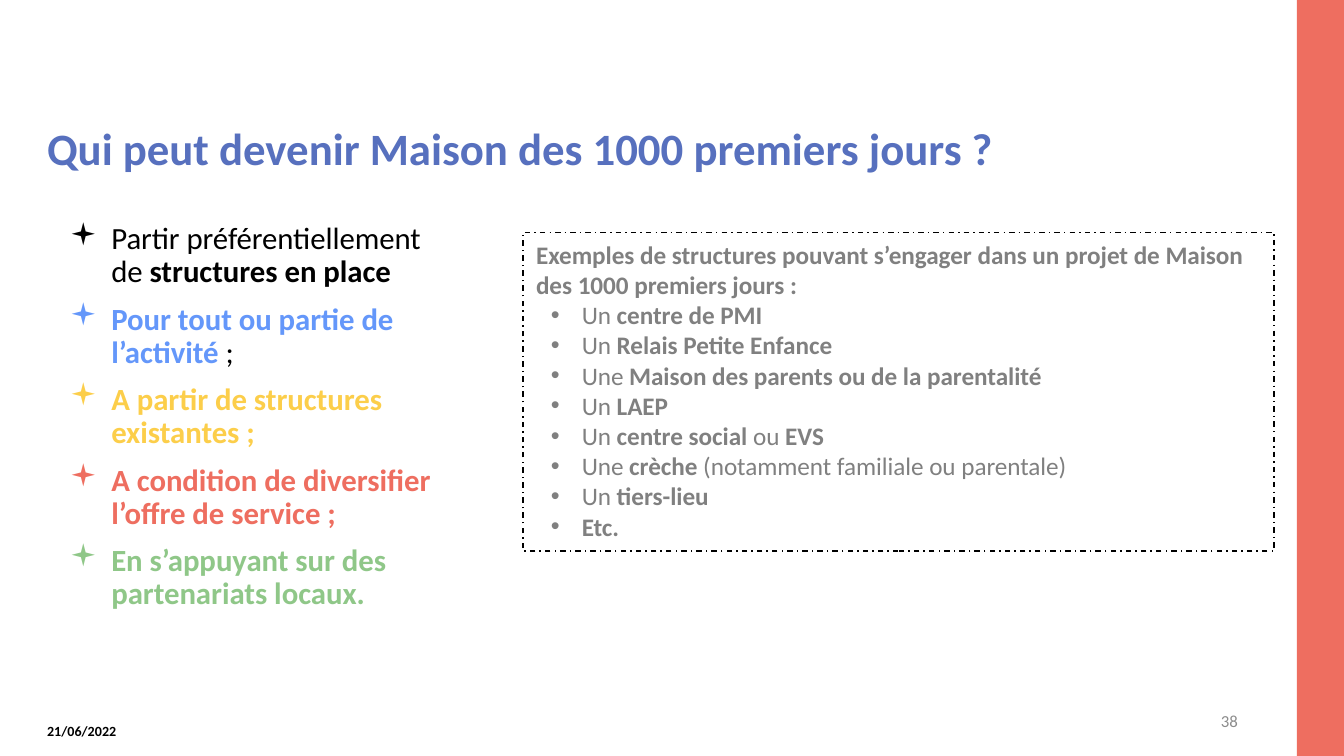
from pptx import Presentation
from pptx.dml.color import RGBColor
from pptx.enum.dml import MSO_LINE
from pptx.enum.shapes import MSO_SHAPE
from pptx.enum.text import MSO_ANCHOR, MSO_AUTO_SIZE, PP_ALIGN
from pptx.oxml.ns import qn
from pptx.util import Inches, Pt
from lxml.etree import SubElement

FONT = "Calibri"
BLACK, GREY, CORAL = "000000", "808080", "EE6E60"
WIDTH = 10
HEIGHT = WIDTH * 9 / 16
BAND_WIDTH = 0.35
TITLE = "Qui peut devenir Maison des 1000 premiers jours ?"

# Each paragraph is a list of runs: (text, bold, colour)
CONDITIONS = [
    [("Partir préférentiellement de ", False, BLACK), ("structures en place", True, BLACK)],
    [("Pour tout ou partie de l’activité ", True, "6497FA"), (";", False, BLACK)],
    [("A partir de structures existantes ;", True, "FCCE4A")],
    [("A condition de diversifier l’offre de service ;", True, CORAL)],
    [("En s’appuyant sur des partenariats locaux.", True, "8FC788")],
]
EXAMPLES_INTRO = ("Exemples de structures pouvant s’engager dans un projet "
                  "de Maison des 1000 premiers jours :")
# Runs: (text, bold)
EXAMPLES = [
    [("Un ", False), ("centre de PMI", True)],
    [("Un ", False), ("Relais Petite Enfance", True)],
    [("Une ", False), ("Maison des parents ou de la parentalité", True)],
    [("Un ", False), ("LAEP", True)],
    [("Un ", False), ("centre social", True), (" ou ", False), ("EVS", True)],
    [("Une ", False), ("crèche", True), (" (notamment familiale ou parentale)", False)],
    [("Un ", False), ("tiers-lieu", True)],
    [("Etc.", True)],
]


def rgb(value):
    return RGBColor.from_string(value)


def place(sp, left, top, width, height):
    sp.left, sp.top, sp.width, sp.height = map(Inches, (left, top, width, height))


def setup_frame(sp, anchor=MSO_ANCHOR.TOP, inset_x=0.1, inset_y=0.05):
    tf = sp.text_frame
    tf.word_wrap = True
    tf.auto_size = MSO_AUTO_SIZE.NONE
    tf.vertical_anchor = anchor
    tf.margin_left = tf.margin_right = Inches(inset_x)
    tf.margin_top = tf.margin_bottom = Inches(inset_y)
    return tf


def add_textbox(s, *box, **frame):
    return setup_frame(s.shapes.add_textbox(*map(Inches, box)), **frame)


def add_run(p, text, size, color, bold=False):
    r = p.add_run()
    r.text = text
    r.font.name, r.font.size, r.font.bold = FONT, Pt(size), bold
    r.font.color.rgb = rgb(color)


def set_indent(p, left, first=0.0):
    pPr = p._p.get_or_add_pPr()
    pPr.set("marL", str(Inches(left)))
    pPr.set("indent", str(Inches(first)))
    return pPr


def add_bullet(p, char, font, left, first):
    pPr = set_indent(p, left, first)
    SubElement(pPr, qn("a:buFont"), typeface=font)
    SubElement(pPr, qn("a:buChar"), char=char)


def add_rect(s, *box):
    sp = s.shapes.add_shape(MSO_SHAPE.RECTANGLE, *map(Inches, box))
    sp.shadow.inherit = False
    return sp


prs = Presentation()
prs.slide_width, prs.slide_height = Inches(WIDTH), Inches(HEIGHT)
s = prs.slides.add_slide(prs.slide_layouts[5])

# Footer
p = add_textbox(s, 7.06, 5.21, 2.25, 0.3, anchor=MSO_ANCHOR.MIDDLE).paragraphs[0]
p.alignment = PP_ALIGN.RIGHT
add_run(p, "38", 9, "8C8C8C")
tf = add_textbox(s, 0.35, 5.25, 1.28, 0.38, anchor=MSO_ANCHOR.MIDDLE, inset_x=0, inset_y=0)
add_run(tf.paragraphs[0], "21/06/2022", 7.5, BLACK, True)

# Title
title = s.shapes.title
place(title, 0.26, 0.65, 9.21, 0.95)
p = setup_frame(title, MSO_ANCHOR.MIDDLE, 0.07, 0.04).paragraphs[0]
p.alignment = PP_ALIGN.LEFT
p.line_spacing = 0.9
set_indent(p, 0.02)
add_run(p, TITLE, 24, "5770BE", True)

# Conditions
tf = add_textbox(s, 0.32, 1.61, 3.09, 3.61)
for i, runs in enumerate(CONDITIONS):
    p = tf.add_paragraph() if i else tf.paragraphs[0]
    p.line_spacing = 0.9
    p.space_before = Pt(7.5)
    add_bullet(p, "▪", "Wingdings", 0.41, -0.31)
    for text, bold, color in runs:
        add_run(p, text, 16.5, color, bold)

# Examples in a dash-dot frame
frame = add_rect(s, 3.89, 1.73, 5.59, 2.37)
frame.fill.background()
frame.line.color.rgb = rgb(BLACK)
frame.line.width = Pt(0.75)
frame.line.dash_style = MSO_LINE.DASH_DOT
tf = setup_frame(frame)
tf.auto_size = MSO_AUTO_SIZE.SHAPE_TO_FIT_TEXT
p = tf.paragraphs[0]
p.alignment = PP_ALIGN.LEFT
add_run(p, EXAMPLES_INTRO, 13.5, GREY, True)
for runs in EXAMPLES:
    p = tf.add_paragraph()
    p.alignment = PP_ALIGN.LEFT
    add_bullet(p, "•", "Arial", 0.34, -0.23)
    for text, bold in runs:
        add_run(p, text, 13.5, GREY, bold)

# Side band
band = add_rect(s, WIDTH - BAND_WIDTH, 0, BAND_WIDTH, HEIGHT)
band.fill.solid()
band.fill.fore_color.rgb = rgb(CORAL)
band.line.fill.background()

prs.save("out.pptx")
